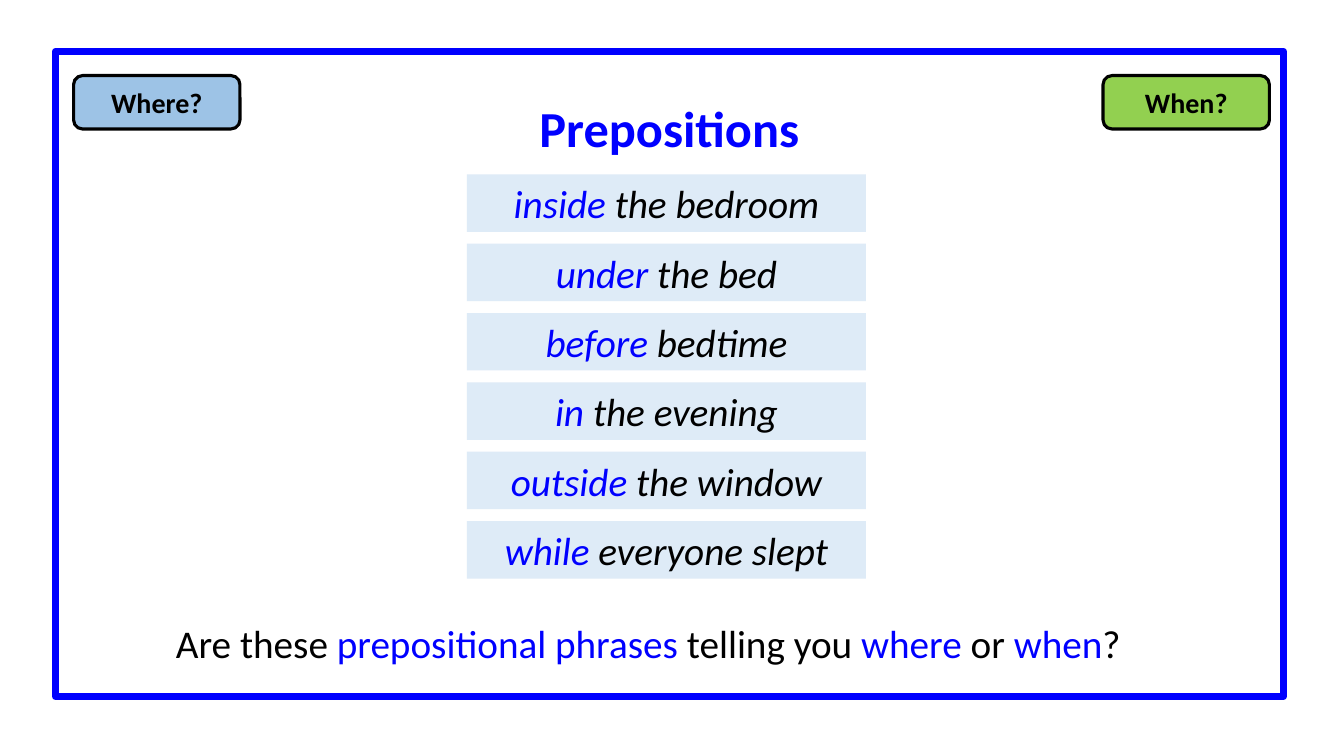
import pptx
import pptx.util
import pptx.dml.color
import pptx.enum.shapes
import pptx.enum.text

Inches = pptx.util.Inches
Pt = pptx.util.Pt
SHAPES = pptx.enum.shapes.MSO_SHAPE

COLORS = {
    "blue": "0000FF",
    "black": "000000",
    "where": "9DC3E6",
    "when": "92D050",
    "phrase": "DEEBF7",
}

PHRASES = [
    ("inside ", "the bedroom"),
    ("under ", "the bed"),
    ("before ", "bedtime"),
    ("in ", "the evening"),
    ("outside ", "the window"),
    ("while ", "everyone slept"),
]

QUESTION = [
    ("Are these ", "black"),
    ("prepositional phrases ", "blue"),
    ("telling you ", "black"),
    ("where", "blue"),
    (" or ", "black"),
    ("when", "blue"),
    ("?", "black"),
]


def color(name):
    return pptx.dml.color.RGBColor.from_string(COLORS[name])


def write_runs(shape, runs, size, bold=False, italic=False):
    text_frame = shape.text_frame
    text_frame.word_wrap = True
    text_frame.vertical_anchor = pptx.enum.text.MSO_ANCHOR.MIDDLE
    paragraph = text_frame.paragraphs[0]
    paragraph.alignment = pptx.enum.text.PP_ALIGN.CENTER
    for text, color_name in runs:
        run = paragraph.add_run()
        run.text = text
        run.font.name = "Calibri"
        run.font.size = Pt(size)
        run.font.bold = bold
        run.font.italic = italic
        run.font.color.rgb = color(color_name)


def add_title(slide, text):
    title = slide.shapes.title
    title.left, title.top = Inches(0.86), Inches(0.91)
    title.width, title.height = Inches(11.56), Inches(0.71)
    write_runs(title, [(text, "blue")], 36, bold=True)


def add_box(slide, kind, left, top, width, height, fill=None, line=None, line_width=0):
    shape = slide.shapes.add_shape(
        kind, Inches(left), Inches(top), Inches(width), Inches(height)
    )
    shape.shadow.inherit = False
    if fill:
        shape.fill.solid()
        shape.fill.fore_color.rgb = color(fill)
    else:
        shape.fill.background()
    if line:
        shape.line.color.rgb = color(line)
        shape.line.width = Pt(line_width)
    else:
        shape.line.fill.background()
    return shape


def add_label(slide, text, left, fill):
    label = add_box(
        slide, SHAPES.ROUNDED_RECTANGLE, left, 0.75, 1.65, 0.53, fill, "black", 2.25
    )
    write_runs(label, [(text, "black")], 20, bold=True)


def add_phrase(slide, index, preposition, rest):
    top = 1.73 + index * 0.688
    box = add_box(slide, SHAPES.RECTANGLE, 4.63, top, 3.96, 0.57, "phrase")
    write_runs(box, [(preposition, "blue"), (rest, "black")], 28, italic=True)


def add_question(slide):
    question = slide.shapes.add_textbox(
        Inches(0.43), Inches(6.09), Inches(12), Inches(0.57)
    )
    write_runs(question, QUESTION, 28)


def main():
    presentation = pptx.Presentation()
    presentation.slide_width = Inches(13.33)
    presentation.slide_height = Inches(7.5)
    slide = presentation.slides.add_slide(presentation.slide_layouts[5])

    add_title(slide, "Prepositions")
    add_box(slide, SHAPES.RECTANGLE, 0.55, 0.51, 12.18, 6.4, line="blue", line_width=5)
    add_question(slide)
    add_label(slide, "When?", 10.94, "when")
    add_label(slide, "Where?", 0.73, "where")
    for index, (preposition, rest) in enumerate(PHRASES):
        add_phrase(slide, index, preposition, rest)

    presentation.save("out.pptx")


if __name__ == "__main__":
    main()
